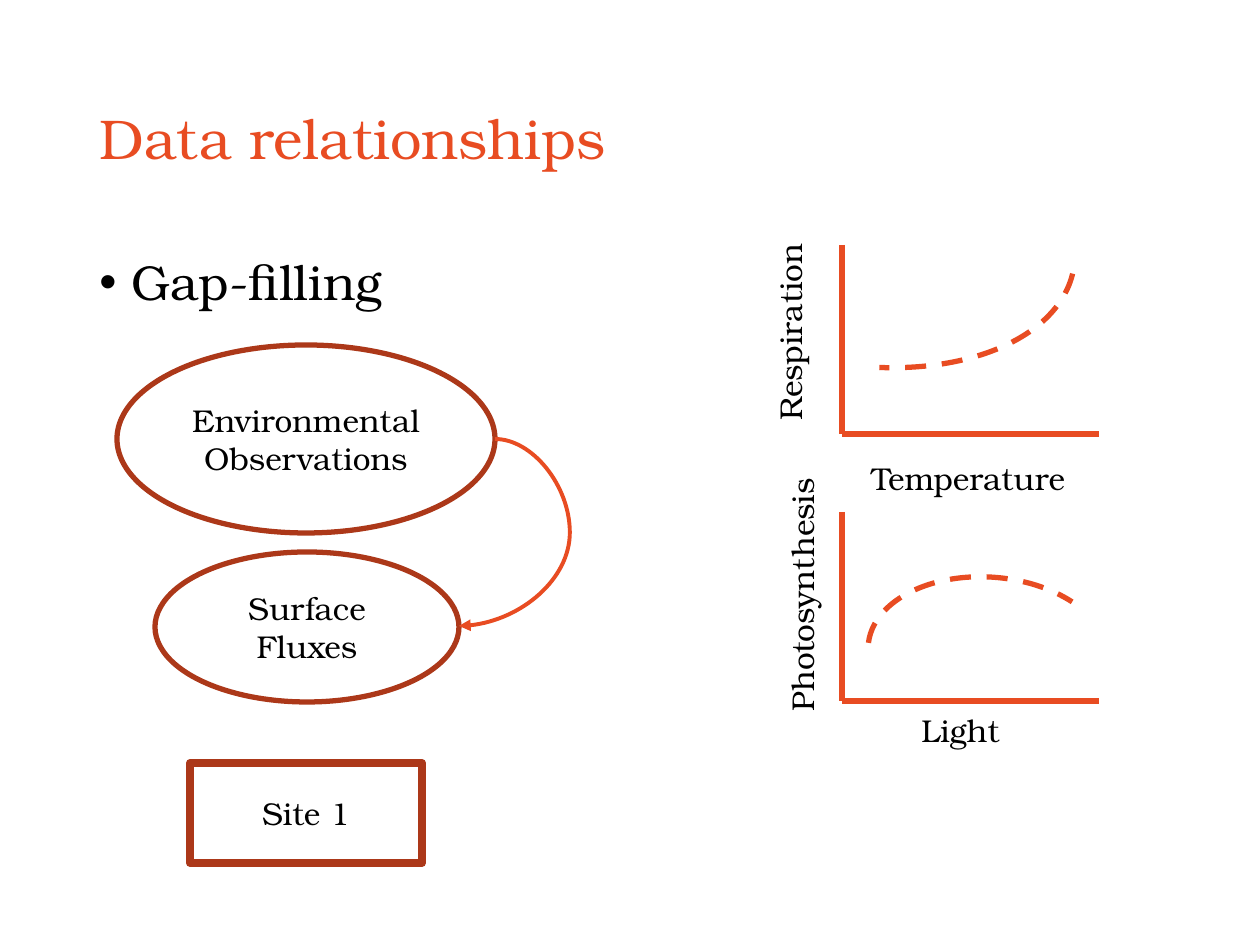
from lxml import etree
from pptx import Presentation
from pptx.dml.color import RGBColor
from pptx.enum.dml import MSO_LINE
from pptx.enum.shapes import MSO_CONNECTOR, MSO_SHAPE
from pptx.enum.text import MSO_ANCHOR, PP_ALIGN
from pptx.oxml.ns import qn
from pptx.util import Emu, Pt

PX = 914400 / 126
FONT = "TeX Gyre Bonum"
ORANGE, RUST, BLACK = "E84C22", "AC3819", "000000"
STRAIGHT, CURVE = MSO_CONNECTOR.STRAIGHT, MSO_CONNECTOR.CURVE
ARC, OVAL, RECTANGLE = MSO_SHAPE.ARC, MSO_SHAPE.OVAL, MSO_SHAPE.RECTANGLE
LEFT, CENTER = PP_ALIGN.LEFT, PP_ALIGN.CENTER
TOP, MIDDLE = MSO_ANCHOR.TOP, MSO_ANCHOR.MIDDLE
DASH = MSO_LINE.DASH


def px(*lengths):
    return [Emu(round(length * PX)) for length in lengths]


def color(value):
    return RGBColor.from_string(value)


def add_xml(parent, tag, **attributes):
    return etree.SubElement(parent, qn(tag), attributes)


def style_line(line, value, points):
    line.color.rgb = color(value)
    line.width = Pt(points)


def write(shape, text, size=18, value=BLACK, align=LEFT, anchor=TOP):
    frame = shape.text_frame
    frame.word_wrap = True
    frame.vertical_anchor = anchor
    frame.text = text
    para = frame.paragraphs[0]
    para.alignment = align
    for span in para.runs:
        span.font.name = FONT
        span.font.size = Pt(size)
        span.font.color.rgb = color(value)
    return para


def add_title(page, text):
    title = page.shapes.title
    title.left, title.top, title.width, title.height = px(87, 50, 1086, 183)
    write(title, text, 32, ORANGE, anchor=MIDDLE).line_spacing = 0.9


def add_bullet(page, text):
    box = page.shapes.add_textbox(*px(87, 252, 1086, 600))
    para = write(box, text, 28)
    properties = para._p.get_or_add_pPr()
    indent = px(32)[0]
    properties.set("marL", str(indent))
    properties.set("indent", str(-indent))
    add_xml(properties, "a:buFont", typeface="Arial")
    add_xml(properties, "a:buChar", char="•")
    para.line_spacing = 0.9


def add_label(page, text, left, top, width, rotation=0):
    box = page.shapes.add_textbox(*px(left, top, width, 51))
    box.rotation = rotation
    write(box, text)


def add_outline(page, kind, bounds, value, points):
    shape = page.shapes.add_shape(kind, *px(*bounds))
    shape.shadow.inherit = False
    shape.fill.background()
    style_line(shape.line, value, points)
    return shape


def add_node(page, kind, bounds, text, points=3):
    shape = add_outline(page, kind, bounds, RUST, points)
    write(shape, text, align=CENTER, anchor=MIDDLE)


def add_trend(page, bounds, rotation, start, end):
    """Draw a dashed arc; start and end are raw adjustments in 100000ths."""
    arc = add_outline(page, ARC, bounds, ORANGE, 3)
    arc.adjustments[0], arc.adjustments[1] = start, end
    arc.rotation = rotation
    arc.line.dash_style = DASH


def add_line(page, kind, start, end, points=3):
    line = page.shapes.add_connector(kind, *px(*start, *end))
    style_line(line.line, ORANGE, points)
    add_xml(line._element.spPr, "a:effectLst")
    return line


def add_axes(page, top):
    left, bottom = 842, top + 189
    add_line(page, STRAIGHT, (left, top), (left, bottom))
    add_line(page, STRAIGHT, (1099, bottom), (left, bottom))


def add_curved_arrow(page, start, end, bend):
    arrow = add_line(page, CURVE, start, end, 2.25)
    add_xml(arrow.line._get_or_add_ln(), "a:tailEnd", type="triangle")
    guides = arrow._element.spPr.find(qn("a:prstGeom")).get_or_add_avLst()
    add_xml(guides, "a:gd", name="adj1", fmla=f"val {round(bend * 100000)}")


def main():
    deck = Presentation()
    deck.slide_width, deck.slide_height = px(1260, 945)
    page = deck.slides.add_slide(deck.slide_layouts[5])

    add_title(page, "Data relationships")
    add_bullet(page, "Gap-filling")

    add_axes(page, 245)
    add_label(page, "Temperature", 859, 453, 223)
    add_label(page, "Respiration", 679, 296, 222, 270)
    add_trend(page, (711, -3, 273, 460), 100.7, 162.61, 201.93)

    add_axes(page, 512)
    add_label(page, "Light", 909, 705, 223)
    add_label(page, "Photosynthesis", 672, 568, 260, 270)
    add_trend(page, (912, 533, 154, 242), 274.3, 162.61, 32.17)

    add_node(page, OVAL, (117, 345, 378, 188), "Environmental Observations")
    add_node(page, OVAL, (155, 552, 304, 150), "Surface Fluxes")
    add_node(page, RECTANGLE, (190, 763, 232, 100), "Site 1", 4.5)
    add_curved_arrow(page, (495, 439), (459, 626), -2.08)

    deck.save("out.pptx")


if __name__ == "__main__":
    main()
